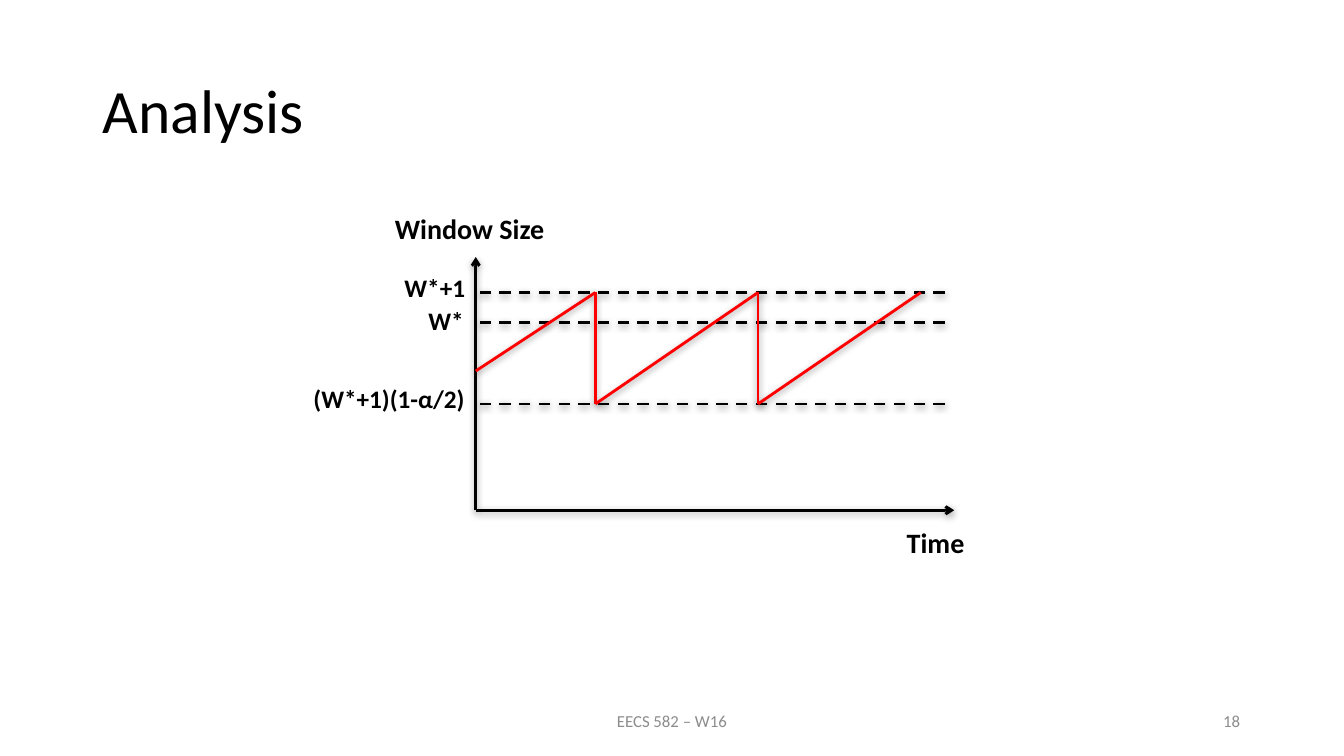
from dataclasses import dataclass

import lxml.etree
import pptx
import pptx.dml.color
import pptx.enum.dml
import pptx.enum.shapes
import pptx.enum.text
import pptx.oxml
import pptx.oxml.ns
import pptx.util

ALIGN = pptx.enum.text.PP_ALIGN
ANCHOR = pptx.enum.text.MSO_ANCHOR


@dataclass(frozen=True)
class Theme:
    font: str = "Calibri"
    ink: str = "000000"
    muted: str = "8C8C8C"
    window: str = "FF0000"
    title: int = 44
    axis_label: int = 20
    level_label: int = 18
    footer: int = 12
    line: int = 2


THEME = Theme()


@dataclass(frozen=True)
class Box:
    left: float
    top: float
    width: float
    height: float

    def at(self, x, y):
        """Point at the given multiples of the box size, from its top left."""
        return int(self.left + x * self.width), int(self.top + y * self.height)

    def area(self, x, y, width, height):
        return Box(*self.at(x, y), int(width * self.width), int(height * self.height))


def add_text(s, box, text, size, color=THEME.ink, bold=False,
             align=ALIGN.LEFT, anchor=ANCHOR.TOP):
    sp = s.shapes.add_textbox(box.left, box.top, box.width, box.height)
    tf = sp.text_frame
    tf.word_wrap = True
    tf.vertical_anchor = anchor
    p = tf.paragraphs[0]
    p.alignment = align
    r = p.add_run()
    r.text = text
    r.font.name = THEME.font
    r.font.size = pptx.util.Pt(size)
    r.font.bold = bold
    r.font.color.rgb = pptx.dml.color.RGBColor.from_string(color)
    return p


def add_shadow(line):
    pt = pptx.util.Pt
    line._element.spPr.append(pptx.oxml.parse_xml(
        f'<a:effectLst {pptx.oxml.ns.nsdecls("a")}>'
        f'<a:outerShdw blurRad="{pt(5)}" dist="{pt(1.6)}" dir="5400000" rotWithShape="0">'
        f'<a:srgbClr val="{THEME.ink}"><a:alpha val="38000"/></a:srgbClr>'
        '</a:outerShdw></a:effectLst>'))


def add_line(s, start, end, color=THEME.ink, dashed=False, arrow=False):
    line = s.shapes.add_connector(pptx.enum.shapes.MSO_CONNECTOR.STRAIGHT, *start, *end)
    line.line.width = pptx.util.Pt(THEME.line)
    line.line.color.rgb = pptx.dml.color.RGBColor.from_string(color)
    if dashed:
        line.line.dash_style = pptx.enum.dml.MSO_LINE.DASH
    if arrow:
        ln = line._element.spPr.find(pptx.oxml.ns.qn("a:ln"))
        lxml.etree.SubElement(ln, pptx.oxml.ns.qn("a:tailEnd"), type="arrow")
    add_shadow(line)


def add_title(s, box):
    p = add_text(s, box, "Analysis", THEME.title, anchor=ANCHOR.MIDDLE)
    p.line_spacing = 0.9


def add_footer(s, box):
    for text, x, width, align in (("EECS 582 – W16", 0.33, 0.34, ALIGN.CENTER),
                                  ("18", 0.71, 0.22, ALIGN.RIGHT)):
        add_text(s, box.area(x, 0, width, 1), text, THEME.footer, THEME.muted,
                 align=align, anchor=ANCHOR.MIDDLE)


def add_window_plot(s, box):
    """Sawtooth of window size over time; the box is the area between the axes."""
    peak, target, trough = 0.14, 0.26, 0.58
    first_peak, period, dash_end = 0.25, 0.34, 0.98

    for tip in ((0, 0), (1, 1)):
        add_line(s, box.at(0, 1), box.at(*tip), arrow=True)
    for level in (peak, target, trough):
        add_line(s, box.at(dash_end, level), box.at(0, level), dashed=True)

    sawtooth = [(0, 0.45), (first_peak, peak)]
    for cycle in range(2):
        drop = first_peak + cycle * period
        sawtooth += [(drop, trough), (drop + period, peak)]
    for start, end in zip(sawtooth, sawtooth[1:]):
        add_line(s, box.at(*start), box.at(*end), THEME.window)

    for text, x, y, width in (("W*+1", -0.17, peak - 0.1, 0.39),
                              ("W*", -0.12, target - 0.09, 0.17),
                              ("(W*+1)(1-α/2)", -0.36, trough - 0.1, 0.39)):
        add_text(s, box.area(x, y, width, 0.16), text, THEME.level_label, bold=True)
    for text, x, y, width in (("Window Size", -0.19, -0.2, 0.43),
                              ("Time", 0.88, 1.04, 0.34)):
        add_text(s, box.area(x, y, width, 0.18), text, THEME.axis_label, bold=True)


def main():
    prs = pptx.Presentation()
    prs.slide_width = pptx.util.Inches(13.33)
    prs.slide_height = pptx.util.Inches(7.5)
    s = prs.slides.add_slide(prs.slide_layouts[6])
    # One cell of a grid of 100 columns by 100 rows
    cell = Box(0, 0, prs.slide_width / 100, prs.slide_height / 100)
    add_title(s, cell.area(6.9, 5.3, 86.3, 19.3))
    add_window_plot(s, cell.area(35.4, 34, 35.6, 33.5))
    add_footer(s, cell.area(0, 92.7, 100, 5.3))
    prs.save("out.pptx")


if __name__ == "__main__":
    main()
